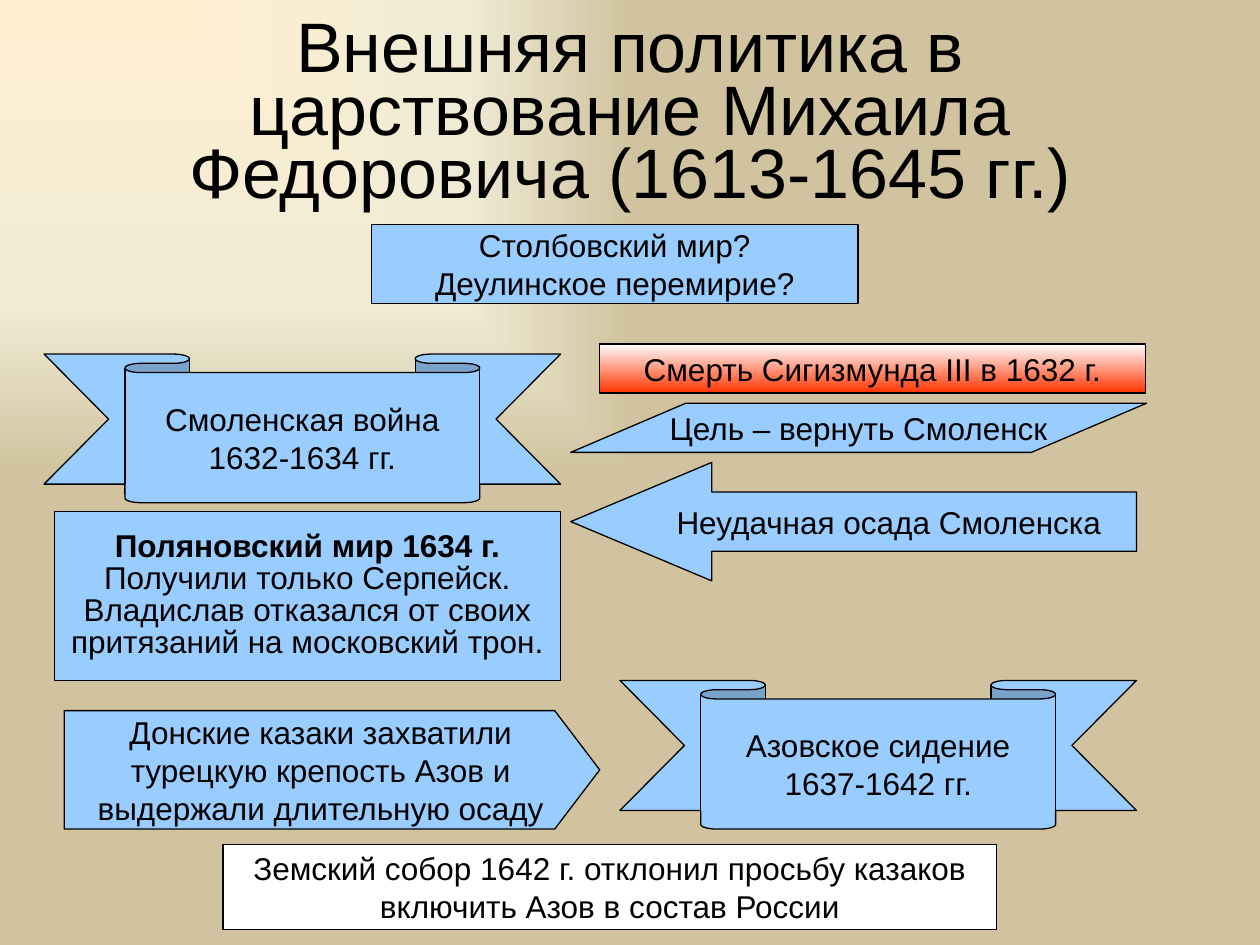
from pptx import Presentation
from pptx.dml.color import RGBColor
from pptx.enum.shapes import MSO_SHAPE
from pptx.enum.text import MSO_ANCHOR, MSO_AUTO_SIZE, PP_ALIGN
from pptx.oxml import parse_xml
from pptx.oxml.ns import nsdecls, qn
from pptx.util import Inches, Pt

BLACK = RGBColor(0x00, 0x00, 0x00)
WHITE = RGBColor(0xFF, 0xFF, 0xFF)
SKY = RGBColor(0x99, 0xCC, 0xFF)
SCARLET = RGBColor(0xFF, 0x33, 0x00)
CREAM = RGBColor(0xFF, 0xEF, 0xD1)
IVORY = RGBColor(0xF0, 0xEB, 0xD5)
SAND = RGBColor(0xD1, 0xC3, 0x9F)
COLUMNS, ROWS = 100, 75
RIBBON_FOLDS = (0.125, 0.687)


class PolicySlide:
    """Places styled elements on a slide divided into 100 columns and 75 rows."""

    font_name = "Arial"
    body_size = Pt(18)
    title_size = Pt(40)

    def __init__(self, presentation):
        self.slide = presentation.slides.add_slide(presentation.slide_layouts[5])
        self.column = presentation.slide_width / COLUMNS
        self.row = presentation.slide_height / ROWS

    def cells(self, left, top, width, height):
        return (round(left * self.column), round(top * self.row),
                round(width * self.column), round(height * self.row))

    def background(self, stops):
        self.slide.background.fill.gradient()
        gradient = self.slide.element.find(".//" + qn("a:gradFill"))
        stop_xml = "".join(
            f'<a:gs pos="{share * 1000}"><a:srgbClr val="{color}"/></a:gs>'
            for share, color in stops)
        gradient.getparent().replace(gradient, parse_xml(
            f'<a:gradFill {nsdecls("a")} rotWithShape="1"><a:gsLst>{stop_xml}</a:gsLst>'
            '<a:path path="rect"><a:fillToRect r="100000" b="100000"/></a:path>'
            '</a:gradFill>'))

    def set_text(self, frame, text, size, spacing=None, bold_lead=False):
        frame.text = text
        frame.vertical_anchor = MSO_ANCHOR.MIDDLE
        for index, paragraph in enumerate(frame.paragraphs):
            paragraph.alignment = PP_ALIGN.CENTER
            paragraph.line_spacing = spacing
            for run in paragraph.runs:
                run.font.name = self.font_name
                run.font.size = size
                run.font.bold = bold_lead and index == 0
                run.font.color.rgb = BLACK

    def title(self, text, area):
        heading = self.slide.shapes.title
        heading.left, heading.top, heading.width, heading.height = self.cells(*area)
        heading.text_frame.auto_size = MSO_AUTO_SIZE.NONE
        self.set_text(heading.text_frame, text, self.title_size, spacing=0.75)

    def block(self, kind, area, text, colors=(SKY,), adjustments=(), **text_style):
        block = self.slide.shapes.add_shape(kind, *self.cells(*area))
        block.shadow.inherit = False
        for index, value in enumerate(adjustments):
            block.adjustments[index] = value
        if len(colors) == 1:
            block.fill.solid()
            block.fill.fore_color.rgb = colors[0]
        else:
            block.fill.gradient()
            block.fill.gradient_angle = 270
            for position, (stop, color) in enumerate(zip(block.fill.gradient_stops, colors)):
                stop.position = position
                stop.color.rgb = color
        block.line.color.rgb = BLACK
        block.line.width = Pt(0.75)
        block.text_frame.word_wrap = False
        self.set_text(block.text_frame, text, self.body_size, **text_style)

    def ribbon(self, left, top, text):
        self.block(MSO_SHAPE.DOWN_RIBBON, (left, top, 41, 11.8), text,
                   adjustments=RIBBON_FOLDS)


def main():
    presentation = Presentation()
    presentation.slide_width, presentation.slide_height = Inches(10), Inches(7.5)
    policy = PolicySlide(presentation)
    policy.background([(0, CREAM), (65, IVORY), (100, SAND)])
    policy.title("Внешняя политика в царствование Михаила Федоровича (1613-1645 гг.)",
                 (5, 3, 90, 12.5))
    policy.block(MSO_SHAPE.RECTANGLE, (29.5, 17.8, 38.6, 6.3),
                 "Столбовский мир?\nДеулинское перемирие?")
    policy.ribbon(3.5, 28.1, "Смоленская война\n1632-1634 гг.")
    policy.block(MSO_SHAPE.RECTANGLE, (47.6, 27.3, 43.3, 3.9),
                 "Смерть Сигизмунда III в 1632 г.", colors=(WHITE, SCARLET))
    policy.block(MSO_SHAPE.FLOWCHART_DATA, (45.3, 32, 45.7, 3.9),
                 "Цель – вернуть Смоленск")
    policy.block(MSO_SHAPE.LEFT_ARROW, (45.3, 36.7, 44.9, 9.4),
                 "Неудачная осада Смоленска", adjustments=(0.5, 1.19))
    policy.block(MSO_SHAPE.RECTANGLE, (4.3, 40.6, 40.2, 13.4),
                 "Поляновский мир 1634 г.\nПолучили только Серпейск.\n"
                 "Владислав отказался от своих\nпритязаний на московский трон.",
                 spacing=0.85, bold_lead=True)
    policy.ribbon(49.2, 54, "Азовское сидение\n1637-1642 гг.")
    policy.block(MSO_SHAPE.PENTAGON, (5.1, 56.4, 42.5, 9.4),
                 "Донские казаки захватили\nтурецкую крепость Азов и\n"
                 "выдержали длительную осаду", adjustments=(0.38,))
    policy.block(MSO_SHAPE.RECTANGLE, (17.7, 67, 61.4, 6.8),
                 "Земский собор 1642 г. отклонил просьбу казаков\n"
                 "включить Азов в состав России", colors=(WHITE,))
    presentation.save("out.pptx")


if __name__ == "__main__":
    main()
